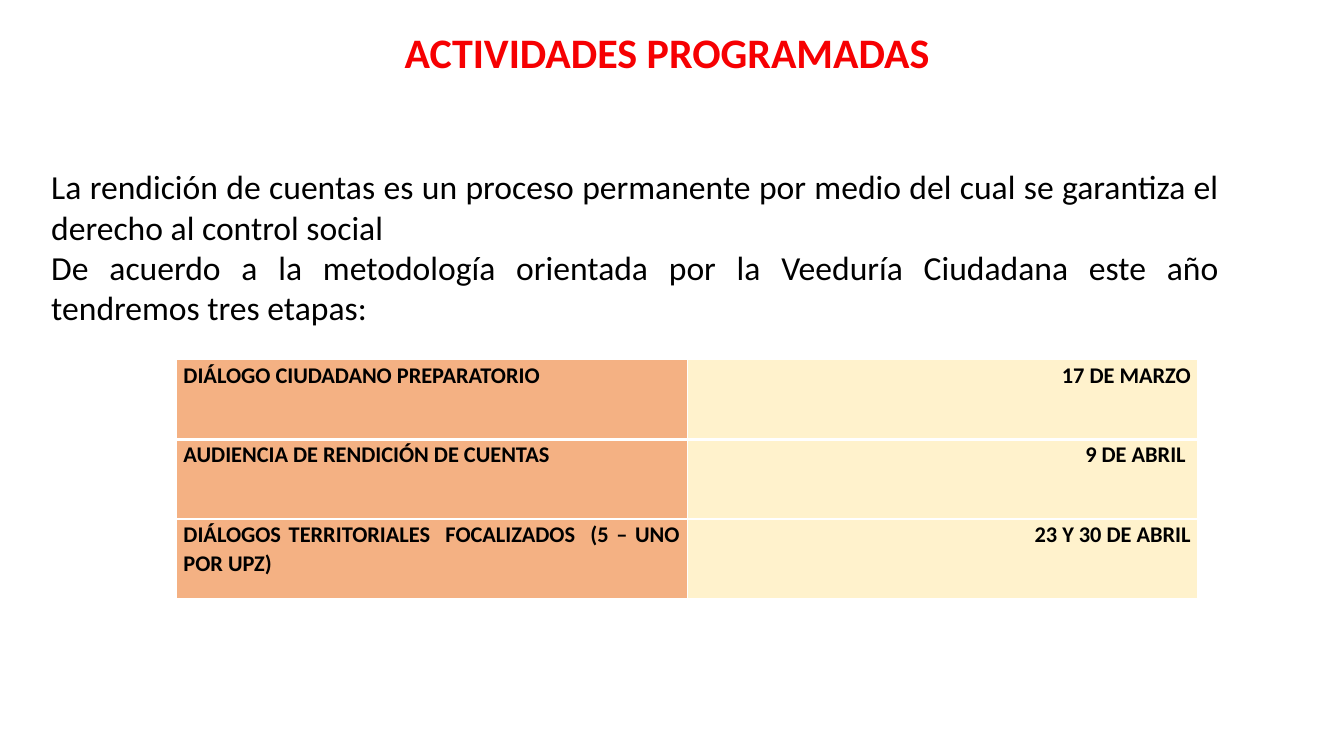
from dataclasses import dataclass

from lxml import etree
from pptx import Presentation
from pptx.dml.color import RGBColor
from pptx.enum.text import PP_ALIGN
from pptx.oxml.ns import qn
from pptx.util import Inches, Pt

CENTER, JUSTIFY, RIGHT = PP_ALIGN.CENTER, PP_ALIGN.JUSTIFY, PP_ALIGN.RIGHT


@dataclass(frozen=True)
class Theme:
    font: str = "Calibri"
    title_color: str = "F60002"
    text_color: str = "000000"
    stage_fill: str = "F4B183"
    date_fill: str = "FFF2CC"
    border_color: str = "FFFFFF"
    title_size: int = 30
    body_size: int = 24
    table_size: int = 16
    thin_border: int = 1
    header_border: int = 3


class SlideBuilder:
    def __init__(self, slide, theme):
        self.slide = slide
        self.theme = theme

    def add_run(self, paragraph, text, size, color, bold, align):
        paragraph.alignment = align
        run = paragraph.add_run()
        run.text = text
        run.font.name = self.theme.font
        run.font.size = Pt(size)
        run.font.bold = bold
        run.font.color.rgb = RGBColor.from_string(color)

    def add_text(self, box, paragraphs, size, color, align, bold=False):
        frame = self.slide.shapes.add_textbox(*map(Inches, box)).text_frame
        frame.word_wrap = True
        for index, text in enumerate(paragraphs):
            paragraph = frame.add_paragraph() if index else frame.paragraphs[0]
            self.add_run(paragraph, text, size, color, bold, align)

    def set_borders(self, cell, top, bottom):
        properties = cell._tc.get_or_add_tcPr()
        thin = self.theme.thin_border
        edges = {"a:lnL": thin, "a:lnR": thin, "a:lnT": top, "a:lnB": bottom}
        # Border elements must come before the cell fill
        for position, (tag, width) in enumerate(edges.items()):
            line = etree.Element(qn(tag), w=str(Pt(width)))
            fill = etree.SubElement(line, qn("a:solidFill"))
            etree.SubElement(fill, qn("a:srgbClr"), val=self.theme.border_color)
            properties.insert(position, line)

    def fill_cell(self, cell, text, fill, align):
        cell.margin_left = cell.margin_right = Inches(0.07)
        cell.margin_top = cell.margin_bottom = 0
        cell.fill.solid()
        cell.fill.fore_color.rgb = RGBColor.from_string(fill)
        paragraph = cell.text_frame.paragraphs[0]
        paragraph.line_spacing = 1.07
        self.add_run(paragraph, text, self.theme.table_size,
                     self.theme.text_color, True, align)

    def add_schedule(self, box, stages):
        theme = self.theme
        table = self.slide.shapes.add_table(
            len(stages), 2, *map(Inches, box)).table
        columns = ((theme.stage_fill, JUSTIFY), (theme.date_fill, RIGHT))
        for row, stage in enumerate(stages):
            top = theme.header_border if row == 1 else theme.thin_border
            bottom = theme.header_border if row == 0 else theme.thin_border
            for column, (fill, align) in enumerate(columns):
                cell = table.cell(row, column)
                self.fill_cell(cell, stage[column], fill, align)
                self.set_borders(cell, top, bottom)


def main():
    presentation = Presentation()
    presentation.slide_width = Inches(13.33)
    presentation.slide_height = Inches(7.5)
    slide = presentation.slides.add_slide(presentation.slide_layouts[6])
    theme = Theme()
    builder = SlideBuilder(slide, theme)

    # Title
    builder.add_text((2.64, 0.21, 8.05, 0.61), ["ACTIVIDADES PROGRAMADAS "],
                     theme.title_size, theme.title_color, CENTER, bold=True)

    # Introduction
    introduction = [
        "La rendición de cuentas es un proceso permanente por medio del cual "
        "se garantiza el derecho al control social",
        "De acuerdo a la metodología orientada por la Veeduría Ciudadana este "
        "año tendremos tres etapas:",
    ]
    builder.add_text((0.41, 1.6, 11.78, 1.72), introduction,
                     theme.body_size, theme.text_color, JUSTIFY)

    # Stages and their dates
    stages = [
        ("DIÁLOGO CIUDADANO PREPARATORIO", "17 DE MARZO"),
        ("AUDIENCIA DE RENDICIÓN DE CUENTAS", "9 DE ABRIL "),
        ("DIÁLOGOS TERRITORIALES  FOCALIZADOS  (5 – UNO POR UPZ)",
         "23 Y 30 DE ABRIL"),
    ]
    builder.add_schedule((1.75, 3.57, 10.13, 2.37), stages)

    presentation.save("out.pptx")


if __name__ == "__main__":
    main()
